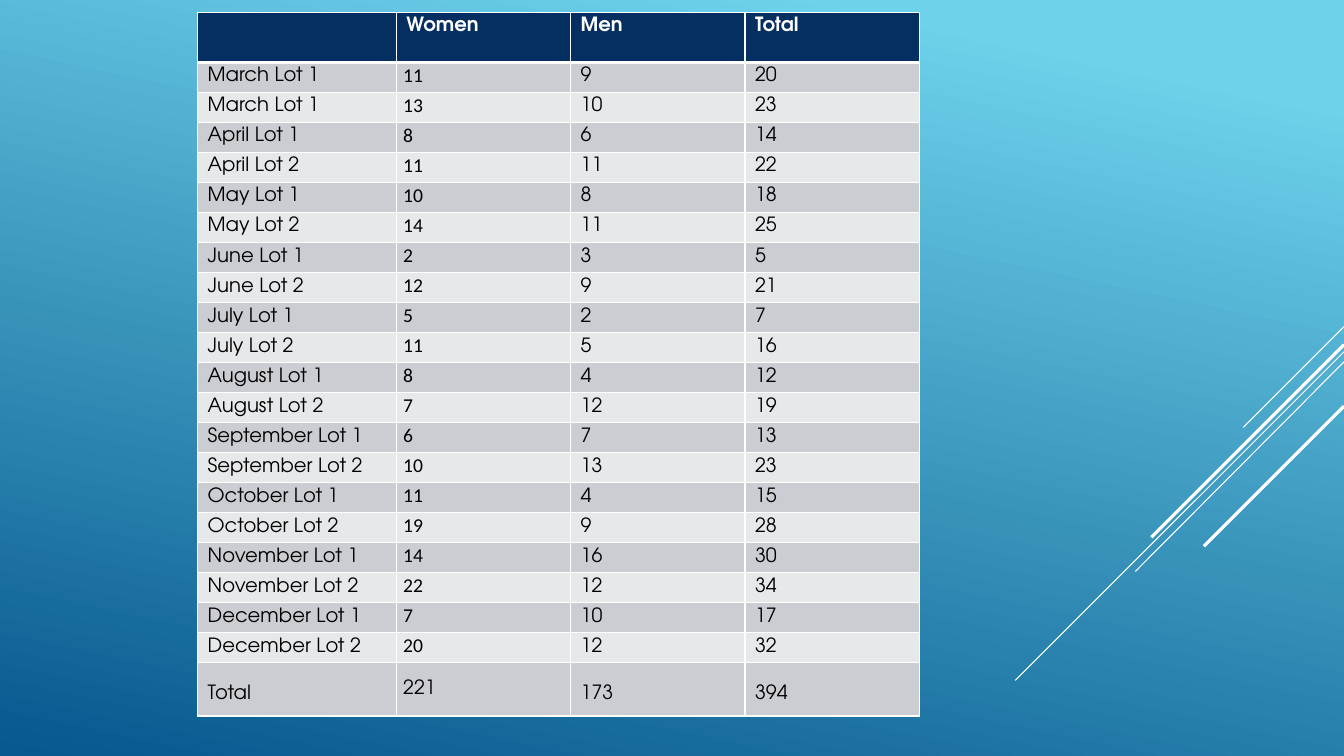
from lxml import etree
from pptx import Presentation
from pptx import util as u
from pptx.dml.color import RGBColor
from pptx.enum import shapes, text
from pptx.oxml import ns

LOTS = [
    ("March Lot 1", 11, 9, 20), ("March Lot 1", 13, 10, 23),
    ("April Lot 1", 8, 6, 14), ("April Lot 2", 11, 11, 22),
    ("May Lot 1", 10, 8, 18), ("May Lot 2", 14, 11, 25),
    ("June Lot 1", 2, 3, 5), ("June Lot 2", 12, 9, 21),
    ("July Lot 1", 5, 2, 7), ("July Lot 2", 11, 5, 16),
    ("August Lot 1", 8, 4, 12), ("August Lot 2", 7, 12, 19),
    ("September Lot 1", 6, 7, 13), ("September Lot 2", 10, 13, 23),
    ("October Lot 1", 11, 4, 15), ("October Lot 2", 19, 9, 28),
    ("November Lot 1", 14, 16, 30), ("November Lot 2", 22, 12, 34),
    ("December Lot 1", 7, 10, 17), ("December Lot 2", 20, 12, 32),
]
HEAD = ("", "Women", "Men", "Total")
SUMS = ("Total", 221, 173, 394)
RAYS = [
    (3.24, 12.33, 4.24, 0.75),
    (3.49, 10.07, 6.75, 0.75),
    (3.59, 11.26, 5.67, 0.75),
    (3.42, 11.42, 5.33, 2.25),
    (4.03, 11.94, 5.42, 2.25),
]


def color(code):
    return RGBColor.from_string(code)


def write(frame, words, font="TeX Gyre Adventor", size=14, ink="000000",
          bold=False, space=None):
    line = frame.paragraphs[0]
    if space:
        line.line_spacing = space
    run = line.add_run()
    run.text = str(words)
    run.font.name = font
    run.font.size = u.Pt(size)
    run.font.bold = bold
    run.font.color.rgb = color(ink)


class Deck:
    white, navy = "FFFFFF", "052F61"
    bands = ("CCCDD2", "E7E8EA")

    def __init__(self):
        self.show = Presentation()
        self.show.slide_width = u.Inches(13.33)
        self.show.slide_height = u.Inches(7.5)
        self.slide = self.show.slides.add_slide(self.show.slide_layouts[6])

    def backdrop(self, stops, angle):
        fill = self.slide.background.fill
        fill.gradient()
        fill.gradient_angle = angle
        for stop, (place, code) in zip(fill.gradient_stops, stops):
            stop.position = place
            stop.color.rgb = color(code)

    def ray(self, top, left, base, width):
        line = self.slide.shapes.add_connector(
            shapes.MSO_CONNECTOR.STRAIGHT,
            u.Inches(13.33), u.Inches(top), u.Inches(left), u.Inches(base))
        line.line.color.rgb = color(self.white)
        line.line.width = u.Pt(width)
        etree.SubElement(line._element.spPr, ns.qn("a:effectLst"))

    def border(self, cell, top=1, base=1):
        props = cell._tc.get_or_add_tcPr()
        sides = (("L", 1), ("R", 1), ("T", top), ("B", base))
        for spot, (side, width) in enumerate(sides):
            edge = etree.Element(ns.qn("a:ln" + side), w=str(u.Pt(width)))
            fill = etree.SubElement(edge, ns.qn("a:solidFill"))
            etree.SubElement(fill, ns.qn("a:srgbClr"), val=self.white)
            props.insert(spot, edge)

    def cell(self, cell, words, fill, side=0.1, top=0.05, edges=(1, 1),
             **style):
        cell.fill.solid()
        cell.fill.fore_color.rgb = color(fill)
        cell.margin_left = cell.margin_right = u.Inches(side)
        cell.margin_top, cell.margin_bottom = u.Inches(top), 0
        cell.vertical_anchor = text.MSO_ANCHOR.TOP
        self.border(cell, *edges)
        if words != "":
            write(cell.text_frame, words, **style)

    def table(self, left, top, widths, heights):
        frame = self.slide.shapes.add_table(
            len(heights), len(widths), u.Inches(left), u.Inches(top),
            u.Inches(sum(widths)), u.Inches(sum(heights)))
        grid = frame.table
        for col, width in zip(grid.columns, widths):
            col.width = u.Inches(width)
        for row, height in zip(grid.rows, heights):
            row.height = u.Inches(height)
        return grid


def main():
    deck = Deck()
    deck.backdrop([(0.1, "6ED2EB"), (1, "06588E")], 258)
    for ray in RAYS:
        deck.ray(*ray)

    heights = [0.5] + [0.298] * len(LOTS) + [0.53]
    grid = deck.table(1.96, 0.12, [1.97, 1.73, 1.73, 1.73], heights)
    for col, words in enumerate(HEAD):
        deck.cell(grid.cell(0, col), words, deck.navy, edges=(1, 3),
                  ink=deck.white, bold=True)
    for row, lot in enumerate(LOTS, 1):
        for col, words in enumerate(lot):
            style = {}
            if col == 1:
                style = dict(side=0.07, top=0, font="Calibri", space=1.07)
            deck.cell(grid.cell(row, col), words, deck.bands[(row - 1) % 2],
                      edges=(3 if row == 1 else 1, 1), **style)
    last = len(heights) - 1
    for col, words in enumerate(SUMS):
        side, top = (0.07, 0.17) if col == 1 else (0.1, 0.22)
        deck.cell(grid.cell(last, col), words, deck.bands[0], side, top)

    deck.show.save("out.pptx")


if __name__ == "__main__":
    main()
